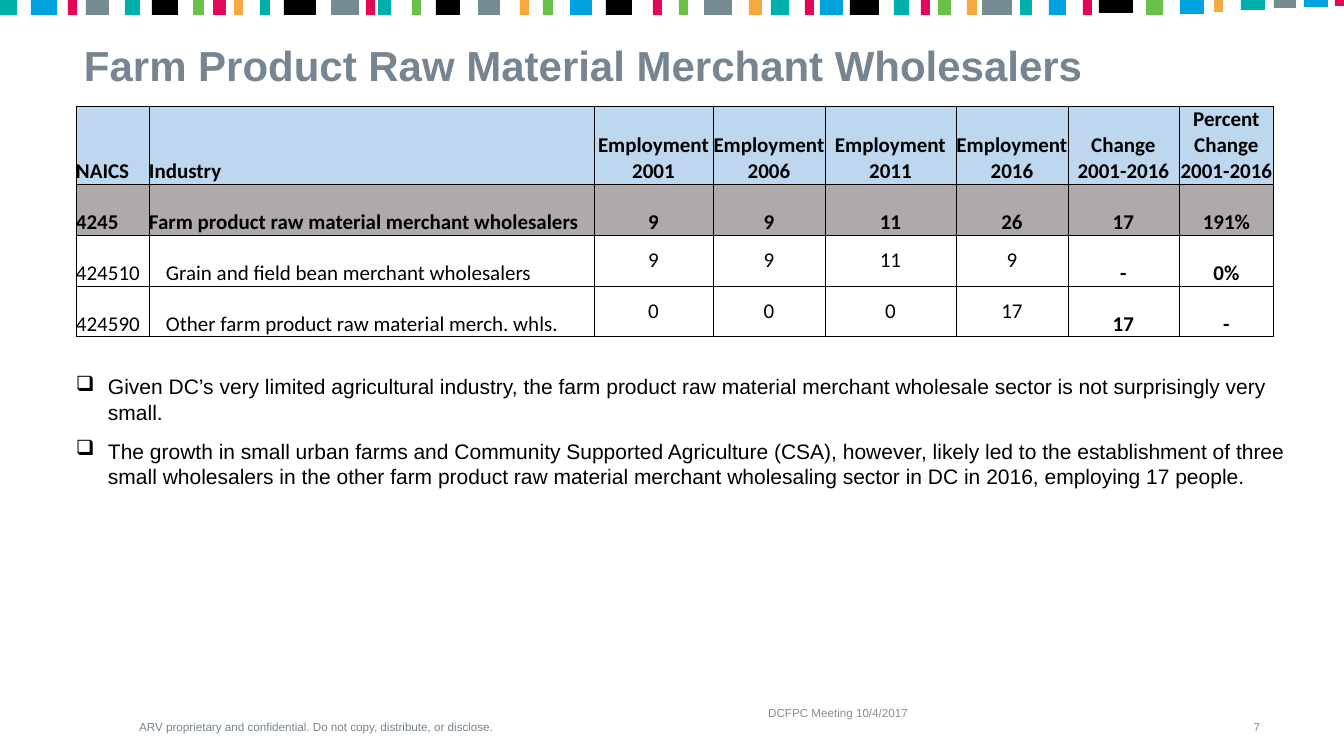
"""Build the slide on farm product raw material merchant wholesalers."""
import pptx
import pptx.dml.color
import pptx.enum.shapes
import pptx.enum.text
import pptx.oxml.ns
import pptx.util
from lxml import etree

RGBColor = pptx.dml.color.RGBColor
ALIGN = pptx.enum.text.PP_ALIGN
ANCHOR = pptx.enum.text.MSO_ANCHOR
qn = pptx.oxml.ns.qn

TEAL = RGBColor(0x00, 0xAF, 0xAA)
BLUE = RGBColor(0x00, 0xA2, 0xE0)
PINK = RGBColor(0xE1, 0x08, 0x59)
GRAY = RGBColor(0x76, 0x8A, 0x91)
GREEN = RGBColor(0x69, 0xC1, 0x4C)
ORANGE = RGBColor(0xF6, 0xA9, 0x41)
BLACK = RGBColor(0x00, 0x00, 0x00)
SLATE = RGBColor(0x76, 0x85, 0x91)
FOOTER_GRAY = RGBColor(0x8C, 0x8C, 0x8C)
HEADER_FILL = RGBColor(0xBD, 0xD7, 0xEE)
TOTAL_FILL = RGBColor(0xAE, 0xAA, 0xAA)

TITLE = "Farm Product Raw Material Merchant Wholesalers"
FOOTERS = [
    ("ARV proprietary and confidential. Do not copy, distribute, or disclose.",
     (107, 701, 418, 33), ALIGN.CENTER, SLATE),
    ("DCFPC Meeting 10/4/2017", (543, 701, 590, 19), ALIGN.CENTER, FOOTER_GRAY),
    ("7", (1179, 701, 81, 33), ALIGN.RIGHT, FOOTER_GRAY),
]
BULLETS = [
    "Given DC’s very limited agricultural industry, the farm product raw material "
    "merchant wholesale sector is not surprisingly very small.",
    "The growth in small urban farms and Community Supported Agriculture (CSA), "
    "however, likely led to the establishment of three small wholesalers in the other "
    "farm product raw material merchant wholesaling sector in DC in 2016, employing "
    "17 people.",
]
EMPLOYMENT = [
    ("", "", "Employment", "Employment", "Employment", "Employment", "Change",
     "Percent Change"),
    ("NAICS", "Industry", "2001", "2006", "2011", "2016", "2001-2016", "2001-2016"),
    ("4245", "Farm product raw material merchant wholesalers", "9", "9", "11", "26",
     "17", "191%"),
    ("424510", "Grain and field bean merchant wholesalers", "9", "9", "11", "9", "-",
     "0%"),
    ("424590", "Other farm product raw material merch. whls.", "0", "0", "0", "17",
     "17", "-"),
]
COLUMN_WIDTHS = [73, 445, 119, 112, 131, 112, 111, 95]
ROW_HEIGHTS = [51, 26, 51, 51, 51]
ROW_FILLS = [HEADER_FILL, HEADER_FILL, TOTAL_FILL, None, None]
HEADER_ROWS, FIRST_DETAIL = 2, 3

STRIPE_HEIGHT = 15
STRIPES = [
    (0, 17, TEAL), (31, 26, BLUE), (68, 9, PINK), (86, 23, GRAY), (125, 15, TEAL),
    (152, 26, BLACK), (193, 11, GREEN), (213, 13, PINK), (234, 9, ORANGE),
    (260, 10, TEAL), (284, 32, BLACK), (331, 28, GRAY), (366, 9, PINK),
    (378, 13, TEAL), (412, 9, GREEN), (436, 24, BLACK), (478, 22, GRAY),
    (520, 9, ORANGE), (543, 10, GREEN), (570, 22, BLUE), (606, 26, BLACK),
    (653, 9, PINK), (679, 9, GREEN), (704, 28, GRAY), (749, 13, ORANGE),
    (771, 18, TEAL), (805, 9, PINK), (820, 23, BLUE), (850, 29, BLACK),
    (894, 15, TEAL), (921, 9, PINK), (938, 13, GREEN), (967, 10, ORANGE),
    (982, 30, GRAY), (1020, 12, TEAL), (1049, 17, BLUE), (1083, 9, PINK),
    (1099, 34, BLACK, 13), (1146, 17, GREEN), (1180, 24, BLUE, 14),
    (1214, 9, ORANGE, 12), (1241, 24, TEAL, 10), (1274, 22, GRAY, 8),
    (1304, 24, BLUE, 7), (1335, 9, PINK, 6),
]


def px(length):
    return pptx.util.Emu(round(length * 914400 / 84))


def set_font(paragraph, name, size, color, bold=False):
    font = paragraph.font
    font.name, font.size, font.bold = name, pptx.util.Pt(size), bold
    font.color.rgb = color


def add_text(slide, box, anchor, inset=0):
    frame = slide.shapes.add_textbox(*map(px, box)).text_frame
    frame.word_wrap = True
    frame.vertical_anchor = anchor
    frame.margin_left = frame.margin_right = px(inset)
    frame.margin_top = frame.margin_bottom = 0
    return frame


def add_stripe(slide, left, width, color, height=STRIPE_HEIGHT):
    stripe = slide.shapes.add_shape(
        pptx.enum.shapes.MSO_SHAPE.RECTANGLE, px(left), 0, px(width), px(height))
    stripe.shadow.inherit = False
    stripe.fill.solid()
    stripe.fill.fore_color.rgb = color
    stripe.line.fill.background()


def set_bullet(paragraph, symbol, indent):
    properties = paragraph._p.get_or_add_pPr()
    properties.set("marL", str(px(indent)))
    properties.set("indent", str(-px(indent)))
    etree.SubElement(properties, qn("a:buChar"), char=symbol)


def set_borders(cell, widths):
    properties = cell._tc.get_or_add_tcPr()
    for side, width in widths.items():
        line = etree.SubElement(properties, qn(f"a:ln{side}"),
                                w=str(pptx.util.Pt(width)))
        if width:
            fill = etree.SubElement(line, qn("a:solidFill"))
            etree.SubElement(fill, qn("a:srgbClr"), val=str(BLACK))
        else:
            etree.SubElement(line, qn("a:noFill"))


def fill_cell(cell, row, column, text):
    last_row, last_column = len(ROW_HEIGHTS) - 1, len(COLUMN_WIDTHS) - 1
    set_borders(cell, {
        "L": 1 if column == 0 else 0.5,
        "R": 1 if column == last_column else 0.5,
        "T": {0: 1, 1: 0}.get(row, 0.5),
        "B": {0: 0, last_row: 1}.get(row, 0.5),
    })
    if ROW_FILLS[row] is None:
        cell.fill.background()
    else:
        cell.fill.solid()
        cell.fill.fore_color.rgb = ROW_FILLS[row]
    detail = row >= FIRST_DETAIL
    cell.margin_left = px(17 if detail and column == 1 else 0)
    cell.margin_right = cell.margin_top = cell.margin_bottom = 0
    yearly = 2 <= column <= 5
    cell.vertical_anchor = ANCHOR.MIDDLE if detail and yearly else ANCHOR.BOTTOM
    cell.text = text
    paragraph = cell.text_frame.paragraphs[0]
    paragraph.alignment = ALIGN.LEFT if column < 2 else ALIGN.CENTER
    set_font(paragraph, "Calibri", 18, BLACK, bold=not detail or column > 5)


def add_employment(slide):
    table = slide.shapes.add_table(
        len(ROW_HEIGHTS), len(COLUMN_WIDTHS), px(76), px(107),
        px(sum(COLUMN_WIDTHS)), px(sum(ROW_HEIGHTS))).table
    table.first_row = table.horz_banding = False
    for column, width in zip(table.columns, COLUMN_WIDTHS):
        column.width = px(width)
    for row, height in zip(table.rows, ROW_HEIGHTS):
        row.height = px(height)
    for row, texts in enumerate(EMPLOYMENT):
        for column, text in enumerate(texts):
            fill_cell(table.cell(row, column), row, column, text)


def main():
    deck = pptx.Presentation()
    deck.slide_width, deck.slide_height = px(1344), px(756)
    slide = deck.slides.add_slide(deck.slide_layouts[6])

    for stripe in STRIPES:
        add_stripe(slide, *stripe)

    title = add_text(slide, (76, 28, 1193, 79), ANCHOR.MIDDLE, inset=8).paragraphs[0]
    title.text = TITLE
    title.line_spacing = 0.9
    set_font(title, "Arial", 36, SLATE, bold=True)

    for text, box, alignment, color in FOOTERS:
        footer = add_text(slide, box, ANCHOR.BOTTOM).paragraphs[0]
        footer.text = text
        footer.alignment = alignment
        set_font(footer, "Arial", 10, color)

    findings = add_text(slide, (76, 374, 1233, 182), ANCHOR.TOP)
    for index, text in enumerate(BULLETS):
        finding = findings.add_paragraph() if index else findings.paragraphs[0]
        finding.text = text
        set_bullet(finding, "❑", 32)
        if index:
            finding.space_before = pptx.util.Pt(12)
        set_font(finding, "Arial", 18, BLACK)

    add_employment(slide)
    deck.save("out.pptx")


if __name__ == "__main__":
    main()
